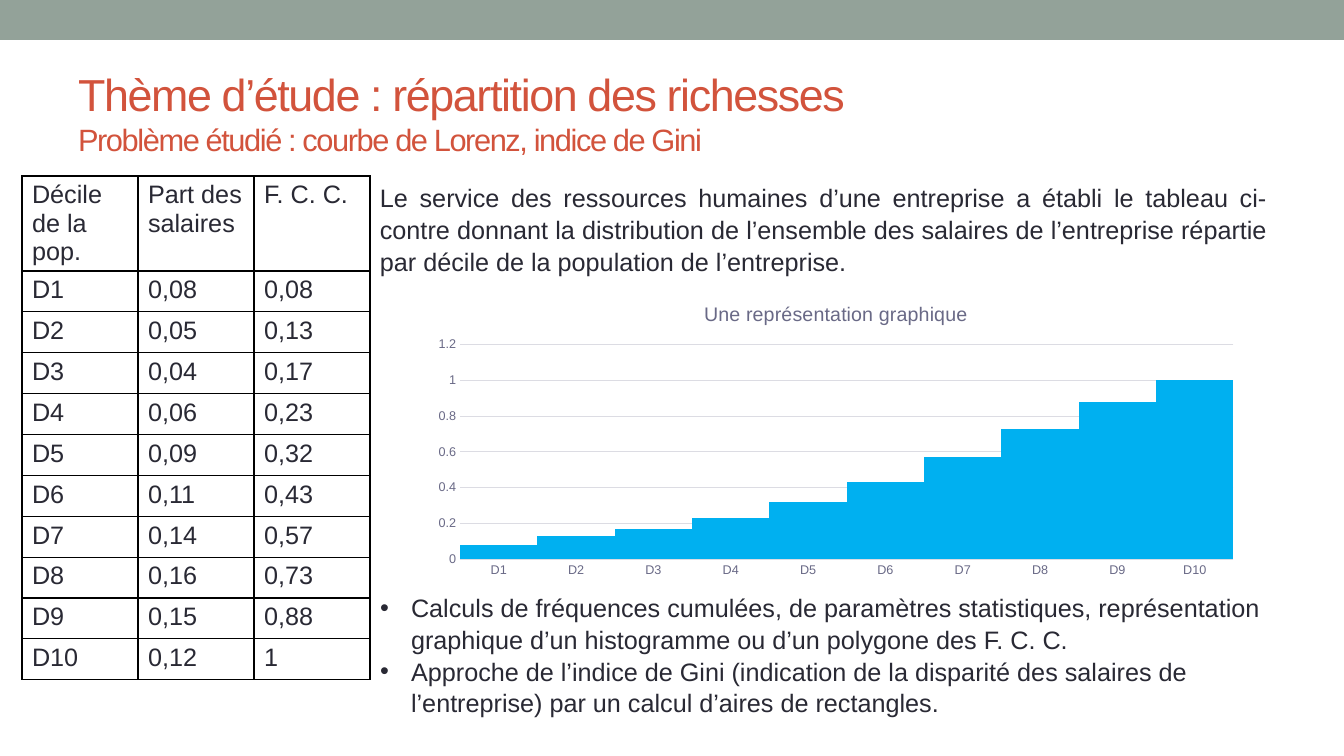
from lxml import etree
from pptx import Presentation
from pptx.chart.data import CategoryChartData
from pptx.dml.color import RGBColor
from pptx.enum.chart import XL_CHART_TYPE, XL_TICK_MARK
from pptx.enum.shapes import MSO_SHAPE
from pptx.enum.text import MSO_ANCHOR, PP_ALIGN
from pptx.oxml.ns import qn
from pptx.util import Emu, Pt

COLUMNS = XL_CHART_TYPE.COLUMN_CLUSTERED
NO_TICK = XL_TICK_MARK.NONE
RECTANGLE = MSO_SHAPE.RECTANGLE
TOP, MIDDLE = MSO_ANCHOR.TOP, MSO_ANCHOR.MIDDLE
LEFT, JUSTIFY = PP_ALIGN.LEFT, PP_ALIGN.JUSTIFY

FONT = "Arial"
INK, ACCENT, BAND = "292934", "D2533C", "93A299"
CHART_TEXT, CHART_LINE, BAR = "696986", "DCDCE3", "00B0F0"
BORDER = "000000"

HEADINGS = ["Décile de la pop.", "Part des salaires", "F. C. C."]
DECILES = [f"D{number}" for number in range(1, 11)]
SHARES = [0.08, 0.05, 0.04, 0.06, 0.09, 0.11, 0.14, 0.16, 0.15, 0.12]
CUMULATED = [0.08, 0.13, 0.17, 0.23, 0.32, 0.43, 0.57, 0.73, 0.88, 1]
INTRODUCTION = (
    "Le service des ressources humaines d’une entreprise a établi le tableau "
    "ci-contre donnant la distribution de l’ensemble des salaires de "
    "l’entreprise répartie par décile de la population de l’entreprise."
)
ACTIVITIES = [
    "Calculs de fréquences cumulées, de paramètres statistiques, "
    "représentation graphique d’un histogramme ou d’un polygone des F. C. C.",
    "Approche de l’indice de Gini (indication de la disparité des salaires de "
    "l’entreprise) par un calcul d’aires de rectangles.",
]


def px(count):
    return Emu(round(count * 914400 / 100.8))


def color(value):
    return RGBColor.from_string(value)


def french(value):
    return str(value).replace(".", ",")


def set_font(font, size, value):
    font.name, font.size, font.bold = FONT, Pt(size), False
    font.color.rgb = color(value)


def write(paragraph, text, size=18, value=INK, align=LEFT, line=1.0, tracking=0):
    """Add a formatted run to the paragraph; tracking is in points."""
    paragraph.alignment = align
    paragraph.line_spacing = line
    paragraph.space_before = paragraph.space_after = Pt(0)
    run = paragraph.add_run()
    run.text = text
    set_font(run.font, size, value)
    if tracking:
        run.font._element.set("spc", str(tracking * 100))


def place(shape, box, anchor=TOP):
    shape.left, shape.top, shape.width, shape.height = map(px, box)
    shape.text_frame.word_wrap = True
    shape.text_frame.vertical_anchor = anchor
    return shape.text_frame


def add_bullet(paragraph, indent):
    properties = paragraph._p.get_or_add_pPr()
    properties.set("marL", str(px(indent)))
    properties.set("indent", str(-px(indent)))
    etree.SubElement(properties, qn("a:buFont")).set("typeface", FONT)
    etree.SubElement(properties, qn("a:buChar")).set("char", "•")


def add_borders(cell):
    properties = cell._tc.get_or_add_tcPr()
    for position, side in enumerate(("a:lnL", "a:lnR", "a:lnT", "a:lnB")):
        line = etree.Element(qn(side), w=str(Pt(1)))
        fill = etree.SubElement(line, qn("a:solidFill"))
        etree.SubElement(fill, qn("a:srgbClr")).set("val", BORDER)
        properties.insert(position, line)


def add_band(slide, box):
    band = slide.shapes.add_shape(RECTANGLE, *map(px, box))
    band.shadow.inherit = False
    band.fill.solid()
    band.fill.fore_color.rgb = color(BAND)
    band.line.fill.background()


def fill_title(slide, box):
    paragraph = place(slide.shapes.title, box, MIDDLE).paragraphs[0]
    write(paragraph, "Thème d’étude : répartition des richesses", size=32,
          value=ACCENT, tracking=-1)
    paragraph.add_line_break()
    write(paragraph, "Problème étudié : courbe de Lorenz, indice de Gini", size=22,
          value=ACCENT, tracking=-1)


def add_decile_table(slide, box, header_height):
    rows = [HEADINGS]
    for decile, share, total in zip(DECILES, SHARES, CUMULATED):
        rows.append([decile, french(share), french(total)])
    left, top, width, height = box
    frame = slide.shapes.add_table(len(rows), len(HEADINGS), *map(px, box))
    table = frame.table
    table.first_row = table.horz_banding = False
    for column in table.columns:
        column.width = px(width / len(HEADINGS))
    for index, texts in enumerate(rows):
        body_height = (height - header_height) / len(DECILES)
        table.rows[index].height = px(body_height if index else header_height)
        for position, text in enumerate(texts):
            cell = table.cell(index, position)
            cell.fill.background()
            add_borders(cell)
            write(cell.text_frame.paragraphs[0], text)


def add_introduction(slide, box):
    text_box = slide.shapes.add_textbox(*map(px, box))
    paragraph = place(text_box, box).paragraphs[0]
    write(paragraph, INTRODUCTION, align=JUSTIFY, line=1.05)


def add_cumulated_chart(slide, box):
    data = CategoryChartData()
    data.categories = DECILES
    data.add_series("F. C. C.", CUMULATED)
    chart = slide.shapes.add_chart(COLUMNS, *map(px, box), data).chart
    set_font(chart.font, 10, INK)
    chart.has_legend = False
    chart.has_title = True
    write(chart.chart_title.text_frame.paragraphs[0],
          "Une représentation graphique", size=14, value=CHART_TEXT)
    plot = chart.plots[0]
    plot.gap_width = 0
    plot.vary_by_categories = False
    bars = plot.series[0].format
    bars.fill.solid()
    bars.fill.fore_color.rgb = color(BAR)
    for axis in (chart.category_axis, chart.value_axis):
        axis.major_tick_mark = axis.minor_tick_mark = NO_TICK
        set_font(axis.tick_labels.font, 9, CHART_TEXT)
    chart.value_axis.format.line.fill.background()
    chart.value_axis.minimum_scale = 0
    chart.value_axis.maximum_scale = 1.2
    chart.value_axis.major_unit = 0.2
    for owner in (chart.category_axis, chart.value_axis.major_gridlines):
        owner.format.line.color.rgb = color(CHART_LINE)
        owner.format.line.width = Pt(0.75)


def fill_activities(slide, box):
    frame = place(slide.placeholders[1], box)
    for index, text in enumerate(ACTIVITIES):
        paragraph = frame.add_paragraph() if index else frame.paragraphs[0]
        write(paragraph, text, line=1.05)
        add_bullet(paragraph, 31)


def main():
    presentation = Presentation()
    presentation.slide_width, presentation.slide_height = px(1344), px(756)
    slide = presentation.slides.add_slide(presentation.slide_layouts[1])
    add_band(slide, (0, 0, 1344, 40))
    fill_title(slide, (68, 58, 1210, 109))
    add_decile_table(slide, (22, 176, 348, 504), header_height=95)
    add_introduction(slide, (370, 176, 907, 102))
    add_cumulated_chart(slide, (422, 286, 828, 298))
    fill_activities(slide, (370, 586, 907, 132))
    presentation.save("out.pptx")


if __name__ == "__main__":
    main()
